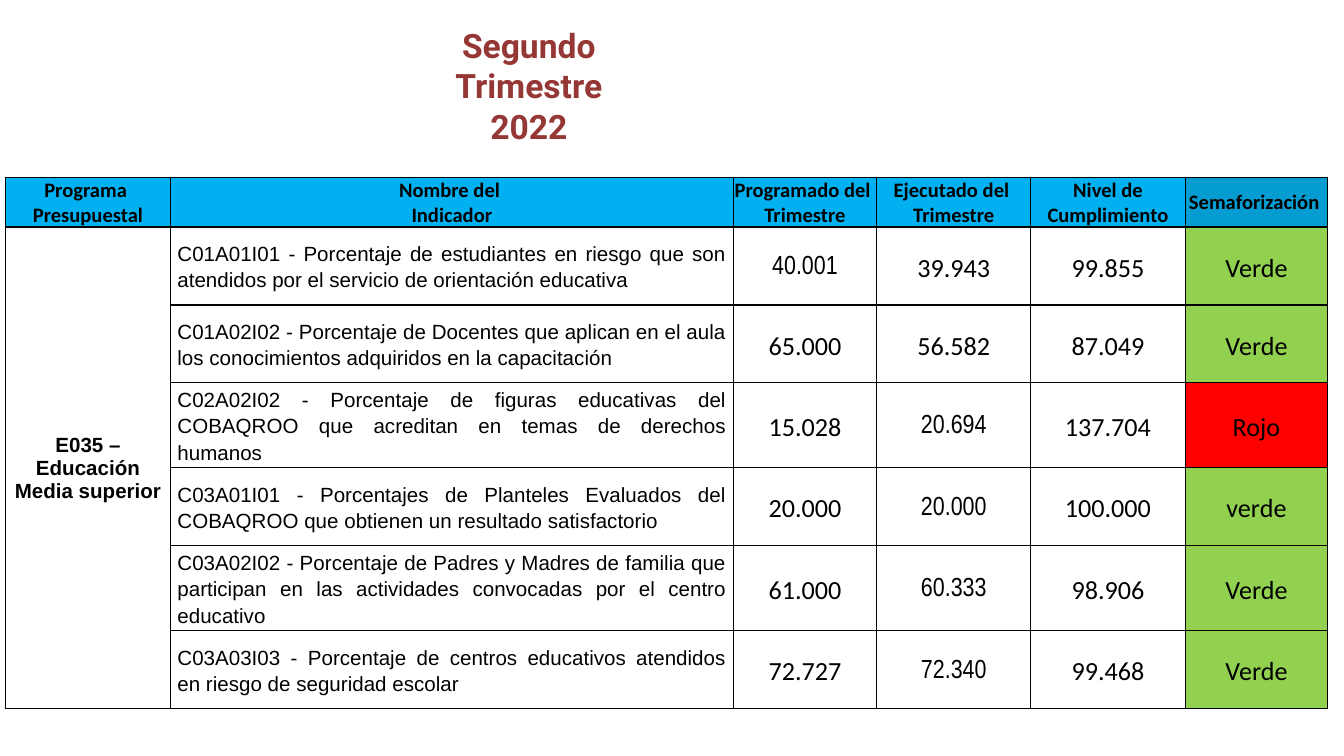
from lxml import etree
from pptx import Presentation, util as u
from pptx.dml.color import RGBColor
from pptx.enum import text as t
from pptx.oxml.ns import qn

PX = 4572  # 200 px to the inch
BLACK, WINE, BLUE, TEAL = "000000", "953735", "00B0F0", "059CD1"
LIGHTS = {"verde": "92D050", "rojo": "FF0000"}
MID, JUST = t.PP_ALIGN.CENTER, t.PP_ALIGN.JUSTIFY
COLS = [246, 837, 214, 229, 230, 212]
HEAD = ["Programa \nPresupuestal", "Nombre del \nIndicador",
        "Programado del \nTrimestre", "Ejecutado del \nTrimestre",
        "Nivel de Cumplimiento", "Semaforización "]
GOALS = [
    ("C01A01I01 - Porcentaje de estudiantes en riesgo que son atendidos por "
     "el servicio de orientación educativa",
     "40.001", "39.943", "99.855", "Verde"),
    ("C01A02I02 - Porcentaje de Docentes que aplican en el aula los "
     "conocimientos adquiridos en la capacitación",
     "65.000", "56.582", "87.049", "Verde"),
    ("C02A02I02 - Porcentaje de figuras educativas del COBAQROO que acreditan "
     "en temas de derechos humanos",
     "15.028", "20.694", "137.704", "Rojo"),
    ("C03A01I01 - Porcentajes de Planteles Evaluados del COBAQROO que obtienen "
     "un resultado satisfactorio",
     "20.000", "20.000", "100.000", "verde"),
    ("C03A02I02 - Porcentaje de Padres y Madres de familia que participan en "
     "las actividades convocadas por el centro educativo",
     "61.000", "60.333", "98.906", "Verde"),
    ("C03A03I03 - Porcentaje de centros educativos atendidos en riesgo de "
     "seguridad escolar",
     "72.727", "72.340", "99.468", "Verde"),
]
# Cells (row, column) set in the narrow face
NARROW = {(1, 2), (3, 3), (4, 3), (5, 3), (6, 3)}


def px(n):
    return u.Emu(n * PX)


def color(code):
    return RGBColor.from_string(code)


def write(frame, words, size=11, face="Arial", ink=BLACK, bold=False,
          align=MID, space=None):
    frame.text = words
    for par in frame.paragraphs:
        par.alignment = align
        par.line_spacing = space
        for run in par.runs:
            font = run.font
            font.size, font.name, font.bold = u.Pt(size), face, bold
            font.color.rgb = color(ink)


def edge(cell, **widths):
    """Draw black cell borders, with widths in points by side (L, R, T, B)."""
    props = cell._tc.get_or_add_tcPr()
    for spot, side in enumerate("LRTB"):
        line = etree.Element(qn("a:ln" + side), w=str(u.Pt(widths[side])))
        fill = etree.SubElement(line, qn("a:solidFill"))
        etree.SubElement(fill, qn("a:srgbClr"), val=BLACK)
        props.insert(spot, line)


def style(cell, words, fill=None, inset=(0, 0, 0), left=0.5, base=1, **form):
    side, top, low = inset
    cell.margin_left = cell.margin_right = px(side)
    cell.margin_top, cell.margin_bottom = px(top), px(low)
    cell.vertical_anchor = t.MSO_ANCHOR.MIDDLE
    if fill:
        cell.fill.solid()
        cell.fill.fore_color.rgb = color(fill)
    else:
        cell.fill.background()
    edge(cell, L=left, R=0.5, T=1, B=base)
    write(cell.text_frame, words, **form)


def title(slide, x, y, w, h):
    shape = slide.shapes.title
    shape.left, shape.top, shape.width, shape.height = map(px, (x, y, w, h))
    frame = shape.text_frame
    frame.word_wrap = True
    frame.auto_size = t.MSO_AUTO_SIZE.SHAPE_TO_FIT_TEXT
    frame.vertical_anchor = t.MSO_ANCHOR.TOP
    write(frame, "Segundo Trimestre 2022", size=18, face="Roboto", ink=WINE,
          bold=True)


def report(slide, x, y, w, h):
    count = len(GOALS)
    holder = slide.shapes.add_table(count + 1, len(COLS),
                                    *map(px, (x, y, w, h)))
    table = holder.table
    table.first_row = table.horz_banding = False
    for col, wide in zip(table.columns, COLS):
        col.width = px(wide)
    for i, row in enumerate(table.rows):
        row.height = px(116 if i else 60)
    holder.height = px(h)  # setting the rows resets it

    # Header row
    for j, words in enumerate(HEAD):
        style(table.cell(0, j), words, fill=TEAL if j == 5 else BLUE,
              left=0.5 if j else 1, face="Calibri", bold=True)

    # Programme, spanning all the indicators
    group = table.cell(1, 0)
    group.merge(table.cell(count, 0))
    style(group, "E035 – Educación Media superior", inset=(2, 2, 0), left=1,
          base=0.5, bold=True)

    # Indicators
    for i, (name, *rest) in enumerate(GOALS, 1):
        style(table.cell(i, 1), name, inset=(10, 0, 0), align=JUST, space=1.15)
        for j, words in enumerate(rest, 2):
            face = "Arial Narrow" if (i, j) in NARROW else "Calibri"
            style(table.cell(i, j), words, fill=LIGHTS.get(words.lower()),
                  inset=(10, 0, 0), size=14, face=face, space=1.15)


def main():
    deck = Presentation()
    deck.slide_width, deck.slide_height = px(2000), px(1125)
    slide = deck.slides.add_slide(deck.slide_layouts[5])
    report(slide, 8, 264, 1968, 780)
    title(slide, 622, 27, 330, 202)
    deck.save("out.pptx")


if __name__ == "__main__":
    main()
